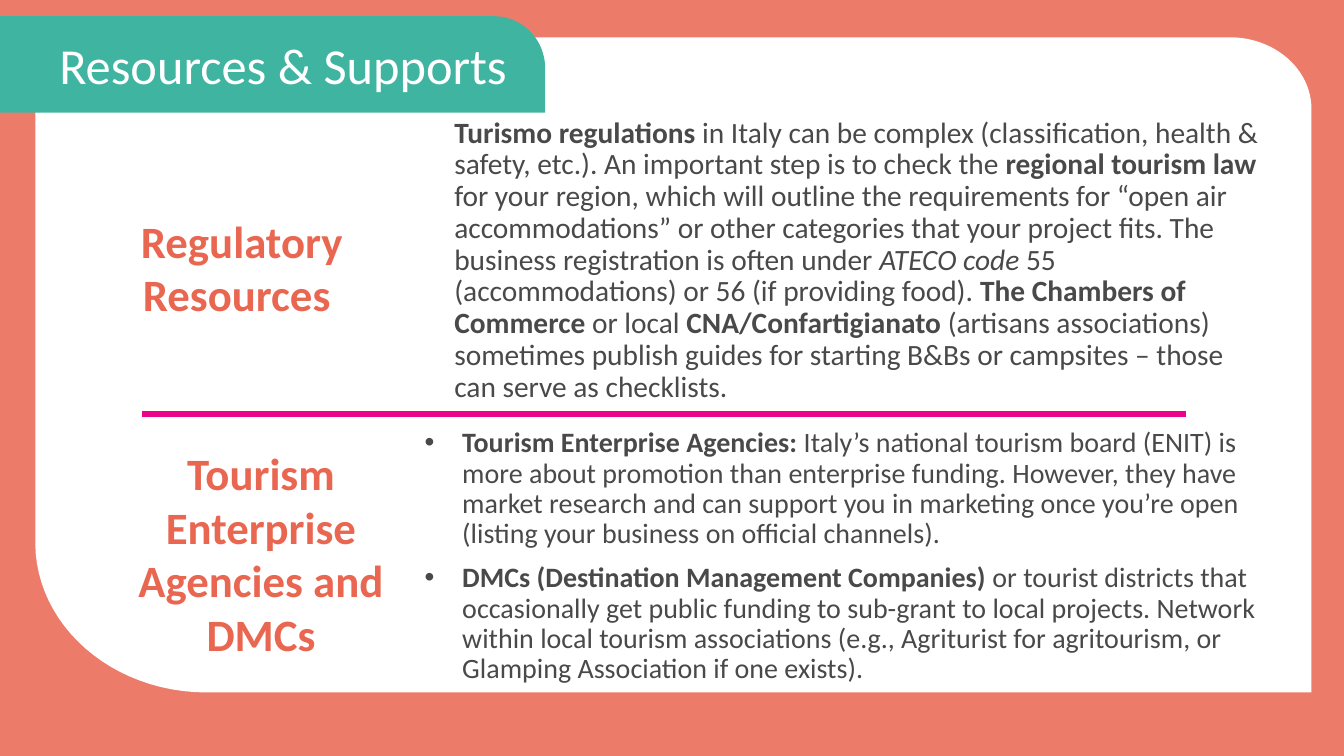
import pptx
import pptx.util
from lxml import etree
from pptx.dml.color import RGBColor
from pptx.enum.shapes import MSO_CONNECTOR
from pptx.enum.text import MSO_ANCHOR, MSO_AUTO_SIZE, PP_ALIGN
from pptx.oxml.ns import qn
from pptx.util import Cm, Pt

SALMON = RGBColor(0xEC, 0x7C, 0x69)
WHITE = RGBColor(0xFF, 0xFF, 0xFF)
TEAL = RGBColor(0x3F, 0xB5, 0xA1)
MAGENTA = RGBColor(0xED, 0x02, 0x8C)
CORAL = RGBColor(0xE9, 0x67, 0x51)
GREY = RGBColor(0x49, 0x49, 0x49)
FONT = "Calibri"
CURVE_STEPS = 24


def add_outline(outline, color):
    """Fill a closed outline given in cm; an entry of three points is a Bezier curve."""
    points = [outline[0]]
    for entry in outline[1:]:
        if len(entry) == 2:
            points.append(entry)
            continue
        corners = [points[-1], *entry]
        for step in range(1, CURVE_STEPS + 1):
            t = step / CURVE_STEPS
            weights = ((1 - t) ** 3, 3 * t * (1 - t) ** 2, 3 * t * t * (1 - t), t ** 3)
            points.append(tuple(sum(w * c[axis] for w, c in zip(weights, corners))
                                for axis in (0, 1)))
    vertices = [(Cm(x), Cm(y)) for x, y in points]
    builder = slide.shapes.build_freeform(*vertices[0])
    builder.add_line_segments(vertices[1:], close=True)
    shape = builder.convert_to_shape()
    shape.shadow.inherit = False
    shape.fill.solid()
    shape.fill.fore_color.rgb = color
    shape.line.fill.background()


def add_text(box, paragraphs, size, color, bulleted=False):
    """Add a text box; each paragraph is a list of (text, style) with style "", "b" or "i"."""
    text_box = slide.shapes.add_textbox(*[Cm(length) for length in box])
    frame = text_box.text_frame
    frame.word_wrap = True
    for index, pieces in enumerate(paragraphs):
        paragraph = frame.paragraphs[0] if index == 0 else frame.add_paragraph()
        if bulleted:
            properties = paragraph._p.get_or_add_pPr()
            properties.set("marL", str(Cm(0.95)))
            properties.set("indent", str(-Cm(0.95)))
            etree.SubElement(properties, qn("a:buFont")).set("typeface", "Arial")
            etree.SubElement(properties, qn("a:buChar")).set("char", "•")
        if index > 0:
            paragraph.space_before = Pt(10)
        for text, style in pieces:
            run = paragraph.add_run()
            run.text = text
            run.font.name = FONT
            run.font.size = Pt(size)
            run.font.color.rgb = color
            run.font.bold = style == "b"
            run.font.italic = style == "i"
    return frame


presentation = pptx.Presentation()
presentation.slide_width = Cm(33.87)
presentation.slide_height = Cm(19.05)
slide = presentation.slides.add_slide(presentation.slide_layouts[5])
slide.background.fill.solid()
slide.background.fill.fore_color.rgb = SALMON

# White panel with two rounded corners
add_outline([(0.89, 0.94), (30.99, 0.94),
             ((32.13, 0.94), (33.05, 1.75), (33.05, 2.74)),
             (33.05, 17.45), (5.21, 17.45),
             ((2.82, 17.45), (0.89, 15.75), (0.89, 13.67))], WHITE)

# Descriptions
regulations = [
    ("Turismo regulations ", "b"),
    ("in Italy can be complex (classification, health & safety, etc.). An important step "
     "is to check the ", ""),
    ("regional tourism law", "b"),
    (" for your region, which will outline the requirements for “open air accommodations” "
     "or other categories that your project fits. The business registration is often "
     "under ", ""),
    ("ATECO code", "i"),
    (" 55 (accommodations) or 56 (if providing food). ", ""),
    ("The Chambers of Commerce ", "b"),
    ("or local ", ""),
    ("CNA/Confartigianato ", "b"),
    ("(artisans associations) sometimes publish guides for starting B&Bs or campsites – "
     "those can serve as checklists.", ""),
]
agencies = [
    ("Tourism Enterprise Agencies:", "b"),
    (" Italy’s national tourism board (ENIT) is more about promotion than enterprise "
     "funding. However, they have market research and can support you in marketing once "
     "you’re open (listing your business on official channels).", ""),
]
companies = [
    ("DMCs (Destination Management Companies)", "b"),
    (" or tourist districts that occasionally get public funding to sub-grant to local "
     "projects. Network within local tourism associations (e.g., Agriturist for "
     "agritourism, or Glamping Association if one exists).", ""),
]
descriptions = [
    add_text((11.2, 2.84, 21.06, 6.15), [regulations], 21, GREY),
    add_text((10.45, 10.68, 21.79, 6.15), [agencies, companies], 20, GREY, bulleted=True),
]
for description in descriptions:
    for paragraph in description.paragraphs:
        paragraph.line_spacing = 0.9

# Section labels
labels = [
    add_text((0.99, 5.25, 10.21, 3), [[("Regulatory Resources ", "b")]], 32, CORAL),
    add_text((2.16, 11.1, 8.84, 5.74),
             [[("Tourism Enterprise Agencies and DMCs", "b")]], 32, CORAL),
]
for label in labels:
    label.paragraphs[0].alignment = PP_ALIGN.CENTER

divider = slide.shapes.add_connector(MSO_CONNECTOR.STRAIGHT,
                                     Cm(3.58), Cm(10.44), Cm(29.9), Cm(10.44))
divider.line.color.rgb = MAGENTA
divider.line.width = Pt(4.5)
etree.SubElement(divider._element.spPr, qn("a:effectLst"))

# Title on its teal tab
add_outline([(0, 0.41), (12.45, 0.41),
             ((13.16, 0.41), (13.74, 0.99), (13.74, 1.73)),
             (13.74, 2.84), (0, 2.84)], TEAL)
title = slide.shapes.title
slide.shapes._spTree.append(title._element)
title.left, title.top, title.width, title.height = Cm(1.24), Cm(0.72), Cm(14), Cm(2)
title.text_frame.text = "Resources & Supports"
title.text_frame.auto_size = MSO_AUTO_SIZE.NONE
title.text_frame.vertical_anchor = MSO_ANCHOR.MIDDLE
heading = title.text_frame.paragraphs[0]
heading.alignment = PP_ALIGN.LEFT
heading.line_spacing = 0.9
heading_font = heading.runs[0].font
heading_font.name = FONT
heading_font.size = Pt(36)
heading_font.color.rgb = WHITE

presentation.save("out.pptx")
